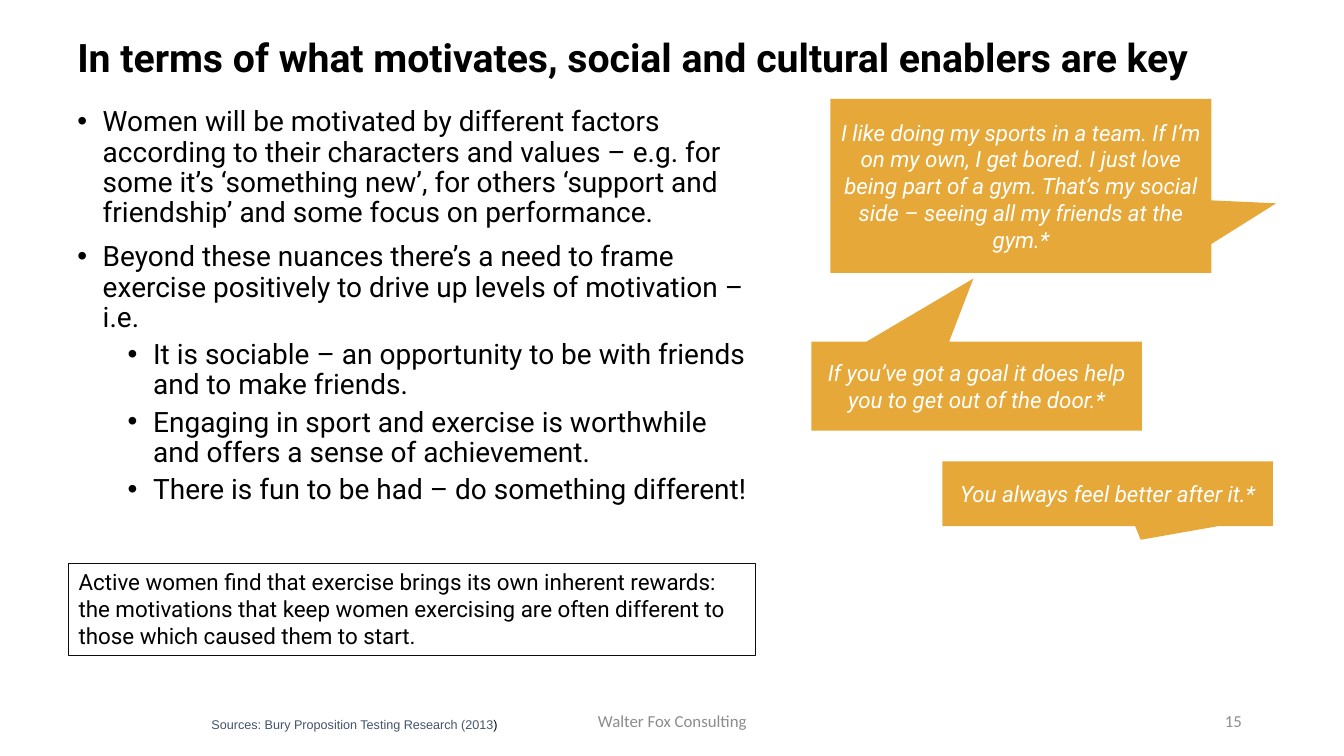
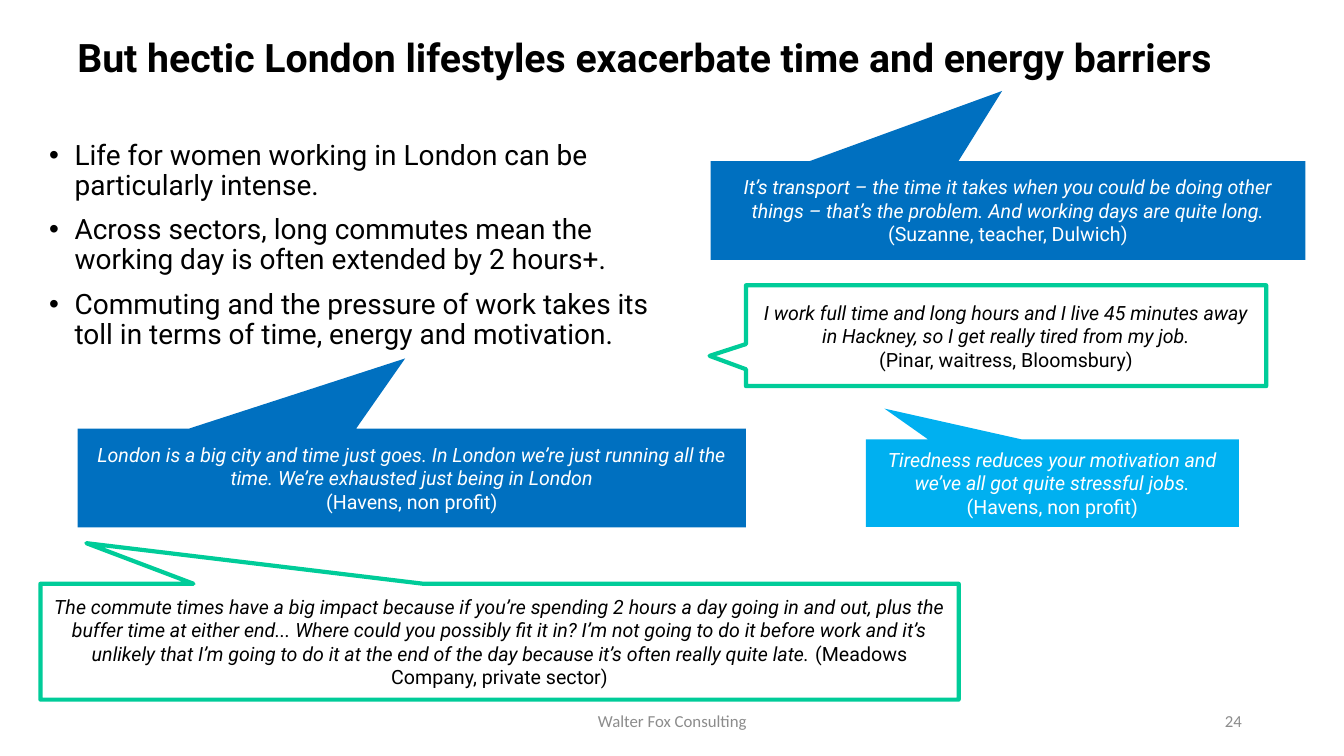
from dataclasses import dataclass

from lxml.etree import SubElement
from pptx import Presentation
from pptx.dml.color import RGBColor
from pptx.enum.shapes import MSO_SHAPE as Preset
from pptx.enum.text import MSO_ANCHOR as Anchor, PP_ALIGN as Align
from pptx.oxml.ns import qn
from pptx.util import Cm, Pt

COLOURS = {
    "black": "000000",
    "white": "FFFFFF",
    "grey": "8C8C8C",
    "slate": "44546A",
    "frame": "0D0D0D",
    "amber": "E6A838",
    "blue": "0070C0",
    "sky": "00B0F0",
    "green": "00CC99",
}
BODY_FONT = "Roboto"
TITLE_BOX = (1.7, -0.08, 30.48, 3.18)
FOOTER_BOX = (11.23, 17.65, 11.43, 1.02)
NUMBER_BOX = (23.93, 17.65, 7.62, 1.02)
FOOTER = "Walter Fox Consulting"
BULLET_INDENT = 0.64
# Left margin in cm and space before in points, by bullet level
BULLET_LEVELS = [(0.64, 10), (1.91, 5)]


@dataclass
class Quote:
    """A speech bubble; tip is the pointer's offset from the centre, in box sizes."""
    box: tuple
    tip: tuple
    colour: str
    words: str
    speaker: str = ""
    speaker_below: bool = False
    outlined: bool = False
    size: int = 14


def colour(name):
    return RGBColor.from_string(COLOURS[name])


def set_font(font, size, colour_name="black", name=BODY_FONT, bold=None, italic=None):
    font.name, font.size = name, Pt(size)
    font.bold, font.italic = bold, italic
    font.color.rgb = colour(colour_name)


def add_text(page, box, text, size, align=Align.LEFT, anchor=Anchor.MIDDLE, **style):
    shape = page.shapes.add_textbox(*map(Cm, box))
    frame = shape.text_frame
    frame.word_wrap, frame.vertical_anchor = True, anchor
    para = frame.paragraphs[0]
    para.text, para.alignment = text, align
    set_font(para.font, size, **style)
    return shape


def add_page(deck, title, number):
    page = deck.slides.add_slide(deck.slide_layouts[6])
    heading = add_text(page, TITLE_BOX, title, 28, bold=True)
    heading.text_frame.paragraphs[0].line_spacing = 0.9
    small_print = {"size": 12, "colour_name": "grey", "name": "Calibri"}
    add_text(page, FOOTER_BOX, FOOTER, align=Align.CENTER, **small_print)
    add_text(page, NUMBER_BOX, str(number), align=Align.RIGHT, **small_print)
    return page


def add_bullets(page, box, items):
    """Items are (level, text) pairs."""
    frame = page.shapes.add_textbox(*map(Cm, box)).text_frame
    frame.word_wrap = True
    for index, (level, text) in enumerate(items):
        para = frame.add_paragraph() if index else frame.paragraphs[0]
        margin, space = BULLET_LEVELS[level]
        para.text, para.level, para.line_spacing = text, level, 0.9
        para.space_before = Pt(space if index else 0)
        properties = para._p.get_or_add_pPr()
        properties.set("marL", str(Cm(margin)))
        properties.set("indent", str(-Cm(BULLET_INDENT)))
        SubElement(properties, qn("a:buFont")).set("typeface", "Arial")
        SubElement(properties, qn("a:buChar")).set("char", "•")
        set_font(para.font, 20)


def add_quote(page, quote):
    bubble = page.shapes.add_shape(Preset.RECTANGULAR_CALLOUT, *map(Cm, quote.box))
    bubble.shadow.inherit = False
    bubble.adjustments[0], bubble.adjustments[1] = quote.tip
    if quote.outlined:
        bubble.fill.background()
        bubble.line.color.rgb = colour(quote.colour)
        bubble.line.width = Pt(3)
    else:
        bubble.fill.solid()
        bubble.fill.fore_color.rgb = colour(quote.colour)
        bubble.line.fill.background()
    text_colour = "black" if quote.outlined else "white"

    frame = bubble.text_frame
    frame.word_wrap, frame.vertical_anchor = True, Anchor.MIDDLE
    para = frame.paragraphs[0]
    for text, italic in ((quote.words, True), (quote.speaker, False)):
        if not text:
            continue
        if not italic:
            if quote.speaker_below:
                para = frame.add_paragraph()
            else:
                text = " " + text
        para.alignment = Align.CENTER
        span = para.add_run()
        span.text = text
        set_font(span.font, quote.size, text_colour, italic=italic)


def add_source(page, box):
    note = add_text(page, box, "Sources: Bury Proposition Testing Research (2013", 9,
                    anchor=Anchor.TOP, colour_name="slate", name="Arial")
    note.text_frame.word_wrap = False
    note.fill.solid()
    note.fill.fore_color.rgb = colour("white")
    bracket = note.text_frame.paragraphs[0].add_run()
    bracket.text = ")"
    bracket.font.color.rgb = colour("black")


def add_takeaway(page, box, text):
    takeaway = add_text(page, box, text, 16, anchor=Anchor.TOP)
    takeaway.line.color.rgb = colour("frame")
    takeaway.line.width = Pt(0.75)


def build_motivation_page(deck):
    page = add_page(
        deck, "In terms of what motivates, social and cultural enablers are key", 15)
    add_bullets(page, (1.7, 2.59, 17.58, 15.32), [
        (0, "Women will be motivated by different factors according to their characters "
            "and values – e.g. for some it’s ‘something new’, for others ‘support and "
            "friendship’ and some focus on performance."),
        (0, "Beyond these nuances there’s a need to frame exercise positively to drive "
            "up levels of motivation – i.e."),
        (1, "It is sociable – an opportunity to be with friends and to make friends."),
        (1, "Engaging in sport and exercise is worthwhile and offers a sense of "
            "achievement."),
        (1, "There is fun to be had – do something different!"),
    ])
    add_source(page, (5.08, 17.93, 7.92, 0.64))
    add_takeaway(
        page, (1.73, 14.2, 17.3, 2.31),
        "Active women find that exercise brings its own inherent rewards: the motivations "
        "that keep women exercising are often different to those which caused them to start.")
    for box, tip, words in (
        ((23.75, 11.63, 8.33, 1.63), (0.1, 0.71), "You always feel better after it.*"),
        ((20.93, 2.49, 9.6, 4.39), (0.67, 0.1),
         "I like doing my sports in a team. If I’m on my own, I get bored. I just love "
         "being part of a gym. That’s my social side – seeing all my friends at the gym.*"),
        ((20.45, 8.61, 8.33, 2.24), (-0.01, -1.21),
         "If you’ve got a goal it does help you to get out of the door.*"),
    ):
        add_quote(page, Quote(box, tip, "amber", words, size=16))


def build_barriers_page(deck):
    page = add_page(
        deck, "But hectic London lifestyles exacerbate time and energy barriers", 24)
    add_bullets(page, (0.99, 3.43, 15.95, 13.77), [
        (0, "Life for women working in London can be particularly intense."),
        (0, "Across sectors, long commutes mean the working day is often extended by "
            "2 hours+."),
        (0, "Commuting and the pressure of work takes its toll in terms of time, energy "
            "and motivation."),
    ])
    for quote in (
        Quote((17.91, 4.06, 14.99, 2.49), (-0.01, -1.21), "blue",
              "It’s transport – the time it takes when you could be doing other things – "
              "that’s the problem. And working days are quite long.",
              "(Suzanne, teacher, Dulwich)", speaker_below=True),
        Quote((18.8, 7.19, 13.11, 2.54), (-0.57, 0.2), "green",
              "I work full time and long hours and I live 45 minutes away in Hackney, "
              "so I get really tired from my job.",
              "(Pinar, waitress, Bloomsbury)", speaker_below=True, outlined=True),
        Quote((21.82, 11.07, 9.4, 2.21), (-0.45, -0.85), "sky",
              "Tiredness reduces your motivation and we’ve all got quite stressful jobs.",
              "(Havens, non profit)"),
        Quote((1.96, 10.8, 16.84, 2.49), (-0.01, -1.21), "blue",
              "London is a big city and time just goes. In London we’re just running all "
              "the time. We’re exhausted just being in London",
              "(Havens, non profit)", speaker_below=True),
        Quote((1.02, 14.71, 23.14, 2.92), (-0.45, -0.85), "green",
              "The commute times have a big impact because if you’re spending 2 hours a "
              "day going in and out, plus the buffer time at either end... Where could you "
              "possibly fit it in? I’m not going to do it before work and it’s unlikely "
              "that I’m going to do it at the end of the day because it’s often really "
              "quite late.",
              "(Meadows Company, private sector)", outlined=True),
    ):
        add_quote(page, quote)


def main():
    deck = Presentation()
    deck.slide_width, deck.slide_height = Cm(33.87), Cm(19.05)
    build_motivation_page(deck)
    build_barriers_page(deck)
    deck.save("out.pptx")


if __name__ == "__main__":
    main()
